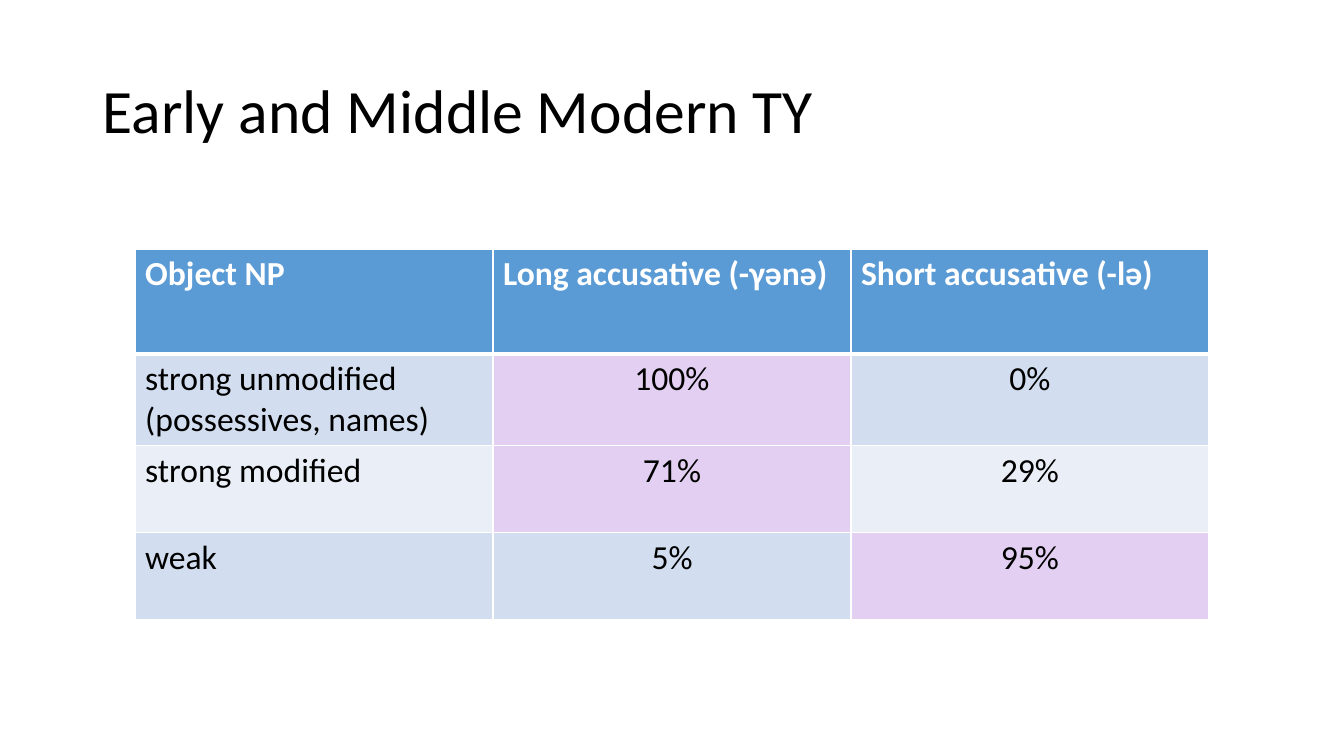
from lxml.etree import SubElement
from pptx import Presentation
from pptx.dml.color import RGBColor
from pptx.enum.text import MSO_ANCHOR, PP_ALIGN
from pptx.oxml.ns import qn
from pptx.util import Inches, Pt

TITLE = "Early and Middle Modern TY"
ROWS = [
    ("Object NP", "Long accusative (-γənə)", "Short accusative (-lə)"),
    ("strong unmodified\n(possessives, names)", "100%", "0%"),
    ("strong modified", "71%", "29%"),
    ("weak", "5%", "95%"),
]
ROW_HEIGHTS = [1.04, 0.86, 0.86, 0.86]
COL_WIDTH = 3.55
HEADER_FILL = "5B9BD5"
BAND_FILLS = ["EAEFF7", "D2DEEF"]
MAJORITY_FILL = "E2CFF1"
MAJORITY_CELLS = {(1, 1), (2, 1), (3, 2)}
WHITE, BLACK = "FFFFFF", "000000"


def color(value):
    return RGBColor.from_string(value)


def style_text(p, size, value, bold=False):
    for r in p.runs:
        r.font.name = "Calibri"
        r.font.size = Pt(size)
        r.font.bold = bold
        r.font.color.rgb = color(value)


def add_borders(cell, widths):
    tcPr = cell._tc.get_or_add_tcPr()
    for side, width in widths.items():
        ln = SubElement(tcPr, qn(f"a:ln{side}"), w=str(Pt(width)))
        fill = SubElement(ln, qn("a:solidFill"))
        SubElement(fill, qn("a:srgbClr"), val=WHITE)


def cell_fill(row, col):
    if row == 0:
        return HEADER_FILL
    if (row, col) in MAJORITY_CELLS:
        return MAJORITY_FILL
    return BAND_FILLS[row % 2]


def add_title(s):
    title = s.shapes.title
    title.left, title.top = Inches(0.92), Inches(0.4)
    title.width, title.height = Inches(11.5), Inches(1.45)
    tf = title.text_frame
    tf.text = TITLE
    tf.vertical_anchor = MSO_ANCHOR.MIDDLE
    p = tf.paragraphs[0]
    p.alignment = PP_ALIGN.LEFT
    p.line_spacing = 0.9
    style_text(p, 44, BLACK)


def add_accusative_table(s):
    cols = len(ROWS[0])
    table = s.shapes.add_table(
        len(ROWS), cols, Inches(1.34), Inches(2.47),
        Inches(COL_WIDTH * cols), Inches(sum(ROW_HEIGHTS))).table
    for column in table.columns:
        column.width = Inches(COL_WIDTH)
    for row, (texts, height) in enumerate(zip(ROWS, ROW_HEIGHTS)):
        table.rows[row].height = Inches(height)
        header = row == 0
        for col, text in enumerate(texts):
            cell = table.cell(row, col)
            add_borders(cell, {"L": 1, "R": 1, "T": 3 if row == 1 else 1,
                               "B": 3 if header else 1})
            cell.fill.solid()
            cell.fill.fore_color.rgb = color(cell_fill(row, col))
            cell.text_frame.text = text
            for p in cell.text_frame.paragraphs:
                centred = col > 0 and not header
                p.alignment = PP_ALIGN.CENTER if centred else PP_ALIGN.LEFT
                style_text(p, 24, WHITE if header else BLACK, header)


def main():
    prs = Presentation()
    prs.slide_width, prs.slide_height = Inches(13.33), Inches(7.5)
    s = prs.slides.add_slide(prs.slide_layouts[5])
    add_title(s)
    add_accusative_table(s)
    prs.save("out.pptx")


if __name__ == "__main__":
    main()
